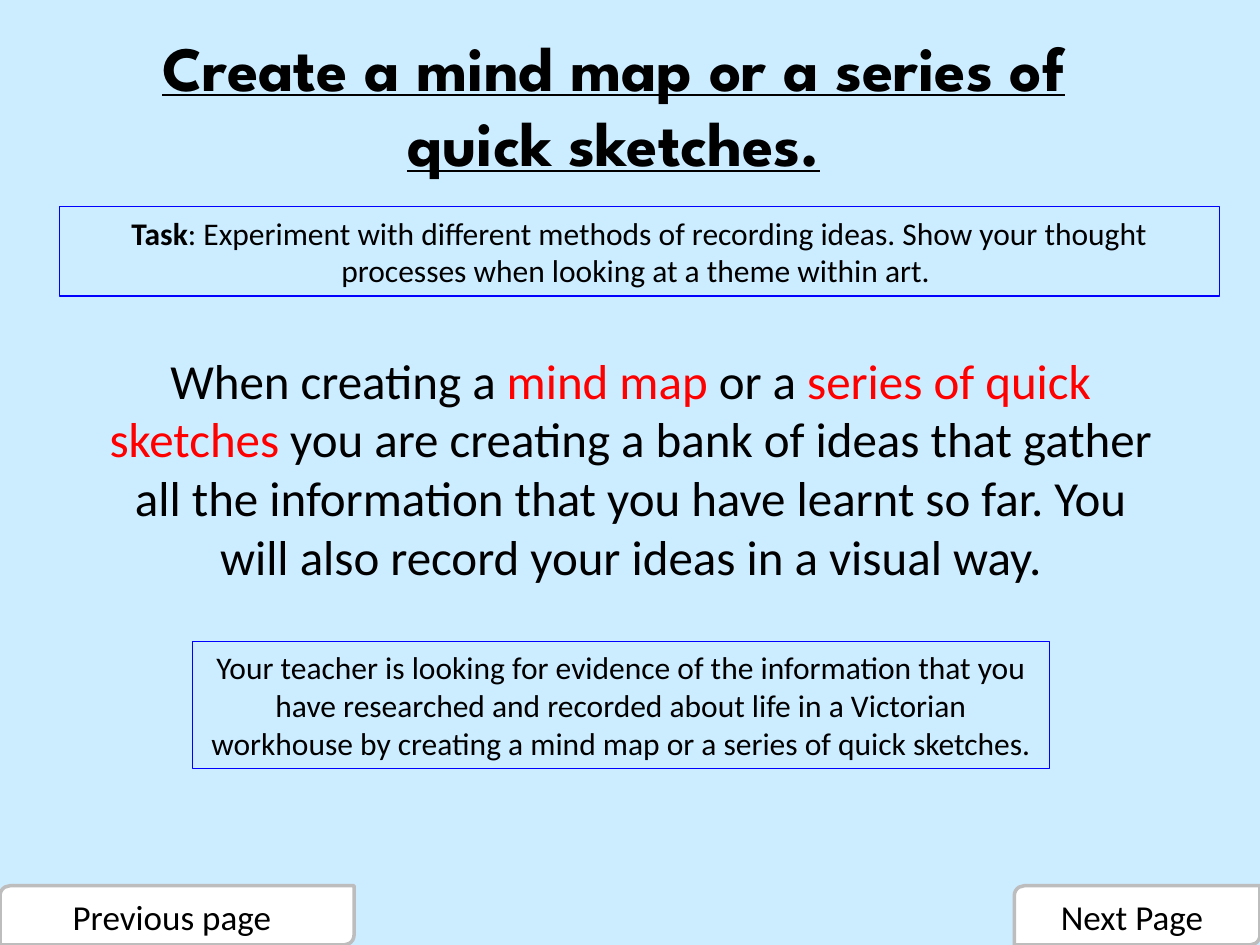
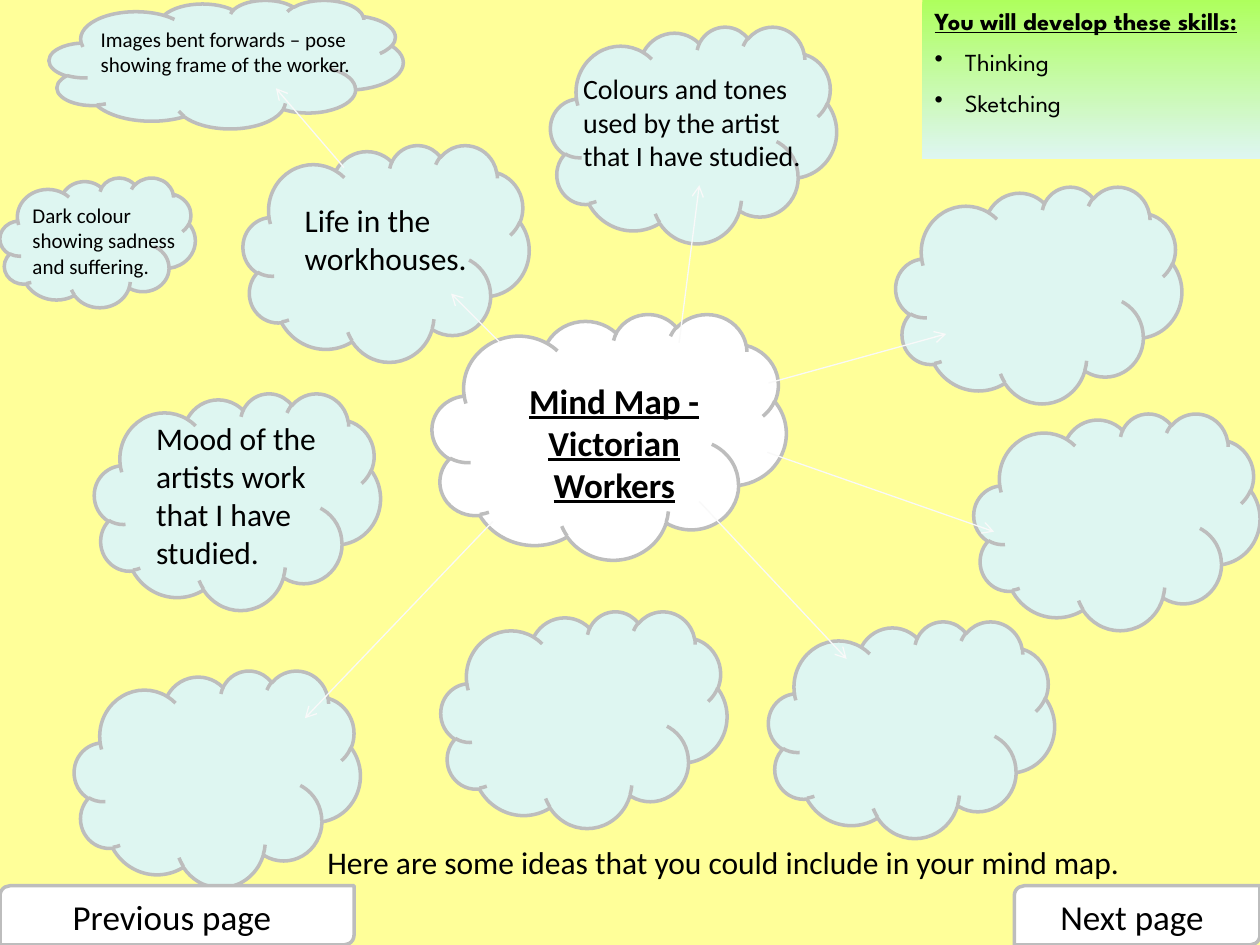
from dataclasses import dataclass
from typing import NamedTuple

from lxml.etree import SubElement
from pptx import Presentation
from pptx.dml.color import RGBColor
from pptx.enum.shapes import MSO_CONNECTOR as Connector, MSO_SHAPE as Preset
from pptx.enum.text import MSO_ANCHOR as Anchor, PP_ALIGN as Align
from pptx.oxml.ns import qn
from pptx.shapes.autoshape import Shape
from pptx.slide import Slide
from pptx.util import Inches, Pt

COLOURS = {
    "sky": "CCECFF", "lemon": "FFFF99", "mint": "DEF6F1", "lime": "AEFF5D",
    "white": "FFFFFF", "outline": "BDBDBD", "arrow": "F9F9F9",
    "frame": "0000FF", "text": "000000", "highlight": "FF0000",
}
BODY_FONT = "Calibri"
DISPLAY_FONT = "League Spartan"
CLOUD_SIZE = (2.27, 1.72)


class Box(NamedTuple):
    left: float
    top: float
    width: float
    height: float


class Run(NamedTuple):
    text: str
    colour: str = "text"
    heading: bool = False


class Line(NamedTuple):
    runs: list[Run]
    bullet: bool = False
    space_before: float = 0


class Arrow(NamedTuple):
    start: tuple[float, float]
    end: tuple[float, float]


@dataclass
class Style:
    size: float
    align: Align = Align.LEFT
    font: str = BODY_FONT
    anchor: Anchor = Anchor.TOP


@dataclass
class Note:
    box: Box
    text: str
    size: float


@dataclass
class Button:
    shape_box: Box
    text_box: Box


TITLE = Style(36, Align.CENTER, DISPLAY_FONT, Anchor.MIDDLE)
FRAMED = Style(18, Align.CENTER, anchor=Anchor.MIDDLE)
STATEMENT = Style(28, Align.CENTER)
BUTTON = Style(20, Align.CENTER)
SKILLS = Style(14, font=DISPLAY_FONT)

BUTTONS = [
    Button(Box(0, 7.03, 2.81, 0.47), Box(0, 7.06, 2.73, 0.43)),
    Button(Box(8.05, 7.03, 1.95, 0.47), Box(7.97, 7.06, 2.03, 0.43)),
]

CLOUD_CORNERS = [
    (1.93, 1.15), (3.5, 4.85), (0.75, 3.12), (0.59, 5.32),
    (4.37, 0.21), (6.1, 4.93), (7.73, 3.28), (7.11, 1.48),
]
DETAIL_CLOUDS = [Box(0, 1.41, 1.55, 1.03), Box(0.39, 0, 2.81, 1.02)]

ARROWS = [
    Arrow((2.73, 1.33), (2.19, 0.7)),
    Arrow((3.91, 4.14), (2.42, 5.7)),
    Arrow((5.55, 3.98), (6.72, 5.23)),
    Arrow((6.09, 3.59), (7.89, 4.22)),
    Arrow((6.1, 3.04), (7.51, 2.65)),
    Arrow((5.39, 2.72), (5.55, 1.47)),
    Arrow((3.97, 2.72), (3.58, 2.33)),
]

NOTES = [
    Note(Box(2.32, 1.55, 1.64, 0.7), "Life in the workhouses.", 18),
    Note(Box(0.16, 1.56, 1.56, 0.7), "Dark colour showing sadness and suffering.", 12),
    Note(Box(0.7, 0.16, 2.58, 0.5),
         "Images bent forwards – pose showing frame of the worker.", 12),
    Note(Box(1.14, 3.28, 1.64, 1.3), "Mood of the artists work that I have studied.", 18),
    Note(Box(4.53, 0.52, 2.03, 0.9),
         "Colours and tones used by the artist that I have studied.", 16),
    Note(Box(2.5, 6.64, 7.27, 0.4),
         "Here are some ideas that you could include in your mind map.", 18),
]


def rgb(name: str) -> RGBColor:
    return RGBColor.from_string(COLOURS[name])


def inches(values: tuple[float, ...]) -> list[Inches]:
    return [Inches(value) for value in values]


def add_slide(presentation: Presentation, background: str) -> Slide:
    slide = presentation.slides.add_slide(presentation.slide_layouts[6])
    slide.background.fill.solid()
    slide.background.fill.fore_color.rgb = rgb(background)
    return slide


def add_preset(slide: Slide, preset: Preset, box: Box, fill: str | None = None,
               line: str | None = None, line_width: float = 2) -> Shape:
    shape = slide.shapes.add_shape(preset, *inches(box))
    shape.shadow.inherit = False
    if fill:
        shape.fill.solid()
        shape.fill.fore_color.rgb = rgb(fill)
    else:
        shape.fill.background()
    if line:
        shape.line.color.rgb = rgb(line)
        shape.line.width = Pt(line_width)
    else:
        shape.line.fill.background()
    return shape


def write(shape: Shape, lines: list[Line], style: Style) -> None:
    frame = shape.text_frame
    frame.word_wrap = True
    frame.vertical_anchor = style.anchor
    for index, line in enumerate(lines):
        paragraph = frame.add_paragraph() if index else frame.paragraphs[0]
        paragraph.alignment = style.align
        if line.bullet:
            properties = paragraph._p.get_or_add_pPr()
            properties.set("marL", str(Inches(0.24)))
            properties.set("indent", str(Inches(-0.24)))
            SubElement(properties, qn("a:buChar"), char="•")
        if line.space_before:
            paragraph.space_before = Pt(line.space_before)
        for part in line.runs:
            run = paragraph.add_run()
            run.text = part.text
            run.font.name = style.font
            run.font.size = Pt(style.size)
            run.font.color.rgb = rgb(part.colour)
            run.font.bold = part.heading
            run.font.underline = part.heading


def add_text(slide: Slide, box: Box, lines: list[Line], style: Style) -> None:
    write(slide.shapes.add_textbox(*inches(box)), lines, style)


def add_framed_text(slide: Slide, box: Box, runs: list[Run]) -> Shape:
    shape = add_preset(slide, Preset.RECTANGLE, box, line="frame", line_width=0.75)
    write(shape, [Line(runs)], FRAMED)
    return shape


def add_cloud(slide: Slide, box: Box, fill: str = "mint") -> None:
    add_preset(slide, Preset.CLOUD, box, fill, "outline")


def add_arrow(slide: Slide, arrow: Arrow) -> None:
    connector = slide.shapes.add_connector(
        Connector.STRAIGHT, *inches(arrow.start + arrow.end))
    connector.line.color.rgb = rgb("arrow")
    connector.line.width = Pt(0.75)
    SubElement(connector.line._get_or_add_ln(), qn("a:tailEnd"), type="arrow")
    SubElement(connector._element.spPr, qn("a:effectLst"))


def add_buttons(slide: Slide, labels: tuple[str, str]) -> None:
    for button, label in zip(BUTTONS, labels):
        add_preset(slide, Preset.ROUND_2_DIAG_RECTANGLE, button.shape_box,
                   "white", "outline")
        add_text(slide, button.text_box, [Line([Run(label)])], BUTTON)


def add_skills_panel(slide: Slide) -> None:
    panel = add_preset(slide, Preset.RECTANGLE, Box(7.32, 0, 2.68, 1.26))
    panel.fill.gradient()
    panel.fill.gradient_angle = 270
    for stop, (position, colour) in zip(panel.fill.gradient_stops,
                                        [(0, "lime"), (1, "mint")]):
        stop.position = position
        stop.color.rgb = rgb(colour)
    heading = Line([Run("You will develop these skills:", heading=True)])
    skills = [Line([Run(skill)], bullet=True, space_before=6.5)
              for skill in ("Thinking", "Sketching")]
    write(panel, [heading, *skills], SKILLS)


def build_task_slide(presentation: Presentation) -> None:
    slide = add_slide(presentation, "sky")
    add_text(slide, Box(0.62, 0.16, 8.5, 1.33), [Line([
        Run("Create a mind map or a series of quick sketches.", heading=True)])], TITLE)
    task = add_framed_text(slide, Box(0.47, 1.64, 9.21, 0.71), [
        Run("Task"),
        Run(": Experiment with different methods of recording ideas. Show your "
            "thought processes when looking at a theme within art. ")])
    task.text_frame.paragraphs[0].runs[0].font.bold = True
    add_framed_text(slide, Box(1.53, 5.09, 6.8, 1.01), [
        Run("Your teacher is looking for evidence of the information that you have "
            "researched and recorded about life in a Victorian workhouse by creating "
            "a mind map or a series of quick sketches.")])
    add_text(slide, Box(0.67, 2.73, 8.67, 2.27), [Line([
        Run("When creating a "),
        Run("mind map", "highlight"),
        Run(" or a "),
        Run("series of quick sketches", "highlight"),
        Run(" you are creating a bank of ideas that gather all the information that "
            "you have learnt so far. You will also record your ideas in a visual way."),
    ])], STATEMENT)
    add_buttons(slide, ("Previous page", "Next Page"))


def build_mind_map_slide(presentation: Presentation) -> None:
    slide = add_slide(presentation, "lemon")
    add_cloud(slide, Box(3.43, 2.49, 2.81, 1.95), "white")
    add_skills_panel(slide)
    add_text(slide, Box(3.9, 2.96, 1.95, 1.1),
             [Line([Run(text, heading=True)])
              for text in ("Mind Map -", "Victorian Workers")],
             Style(20, Align.CENTER))
    for corner in CLOUD_CORNERS:
        add_cloud(slide, Box(*corner, *CLOUD_SIZE))
    for box in DETAIL_CLOUDS:
        add_cloud(slide, box)
    for arrow in ARROWS:
        add_arrow(slide, arrow)
    for note in NOTES:
        add_text(slide, note.box, [Line([Run(note.text)])], Style(note.size))
    add_buttons(slide, ("Previous page", "Next page"))


def main() -> None:
    presentation = Presentation()
    presentation.slide_width = Inches(10)
    presentation.slide_height = Inches(7.5)
    build_task_slide(presentation)
    build_mind_map_slide(presentation)
    presentation.save("out.pptx")


if __name__ == "__main__":
    main()
